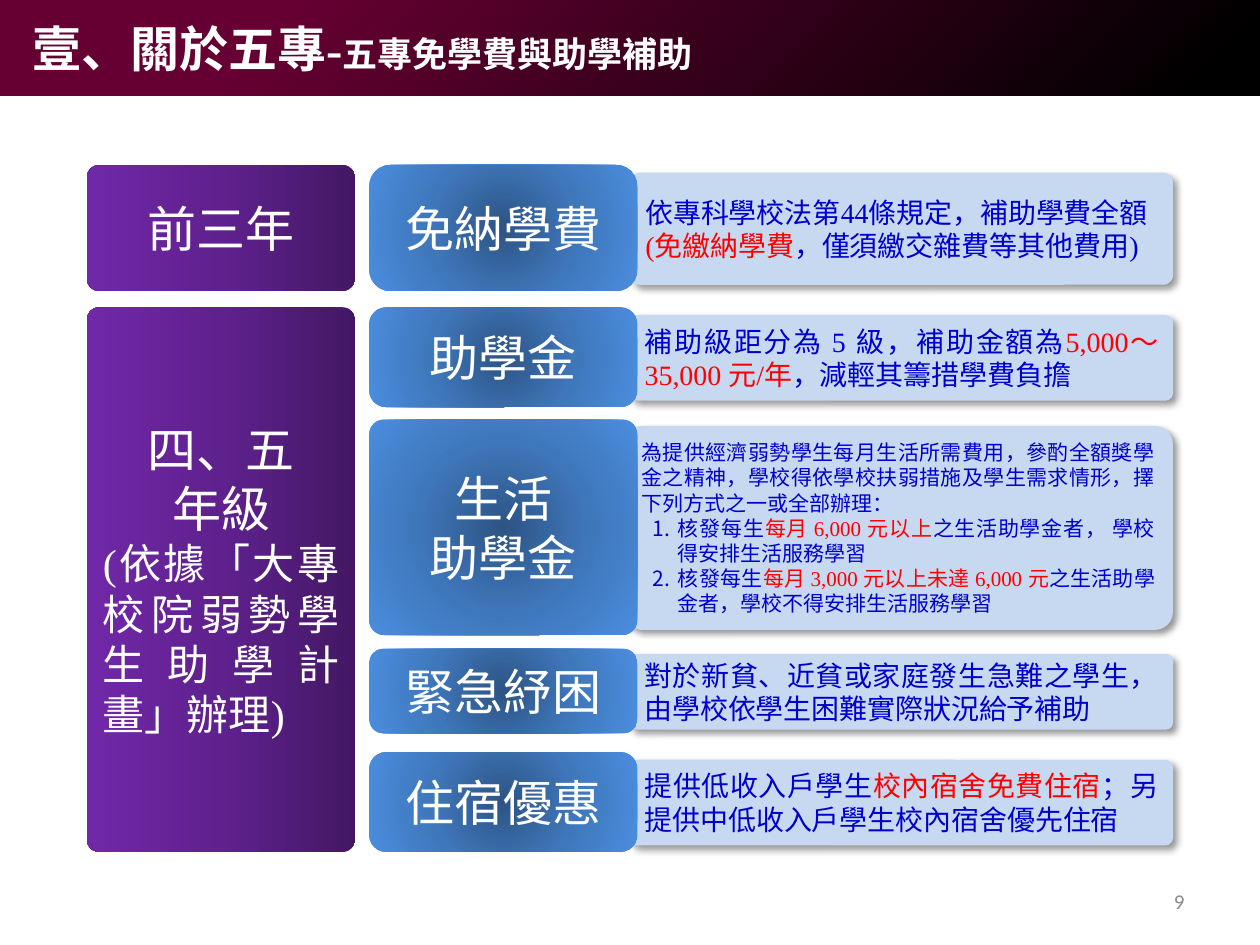
from lxml.etree import SubElement
from pptx import Presentation
from pptx.dml.color import RGBColor
from pptx.enum.shapes import MSO_SHAPE as SHAPE
from pptx.enum.text import MSO_ANCHOR as ANCHOR, MSO_AUTO_SIZE as AUTO, PP_ALIGN as AL
from pptx.oxml.ns import qn
from pptx.util import Inches, Pt

# Content
WHITE, BLUE, RED, PANEL = "FFFFFF", "0000CC", "FF0000", "C6D9F1"
BANNER = [(5, "660032"), (22, "660032"), (95, "000000")]
PURPLE = [(0, "431764"), (50, "5F218E"), (100, "7128A8")]
SKY = [(0, "2D5484"), (50, "3F77BB"), (100, "4B8DDE")]

TITLE = [("壹、關於五專-", {"size": 28}), ("五專免學費與助學補助", {"size": 20})]
CENTER, JUSTIFY = {"size": 28, "align": AL.CENTER}, {"size": 24, "align": AL.JUSTIFY}

# Years: top, height, corner, paragraphs
YEARS = [
    (1.31, 1, 0.1, [("前三年", CENTER)]),
    (2.44, 4.32, 0.046, [
        ("四、五", CENTER),
        ("年級", CENTER),
        ("(依據「大專校院弱勢學生助學計畫」辦理)", JUSTIFY)]),
]

# Subsidies: top, height, panel inset, corner, label lines, text size, panel paragraphs
SUBSIDIES = [
    (1.31, 1, 0.06, 0.167, ["免納學費"], 16, [
        ["依專科學校法第44條規定，補助學費全額"],
        [("(免繳納學費", {"color": RED}), "，僅須繳交雜費等其他費用)"]]),
    (2.44, 0.79, 0.06, 0.167, ["助學金"], 16, [
        ["補助級距分為 5 級，補助金額為", ("5,000～ 35,000 元/年", {"color": RED}),
         "，減輕其籌措學費負擔"]]),
    (3.33, 1.71, 0.05, 0.069, ["生活", "助學金"], 12, [
        ["為提供經濟弱勢學生每月生活所需費用，參酌全額獎學金之精神，"
         "學校得依學校扶弱措施及學生需求情形，擇下列方式之一或全部辦理："],
        ["核發每生", ("每月 6,000 元以上", {"color": RED}),
         "之生活助學金者， 學校得安排生活服務學習"],
        ["核發每生", ("每月 3,000 元以上未達 6,000 元", {"color": RED}),
         "之生活助學金者，學校不得安排生活服務學習"]]),
    (5.15, 0.67, 0.04, 0.167, ["緊急紓困"], 16, [
        ["對於新貧、近貧或家庭發生急難之學生，由學校依學生困難實際狀況給予補助"]]),
    (5.97, 0.79, 0.06, 0.167, ["住宿優惠"], 16, [
        ["提供低收入戶學生", ("校內宿舍免費住宿", {"color": RED}),
         "；另提供中低收入戶學生校內宿舍優先住宿"]]),
]


def rgb(value):
    return RGBColor.from_string(value)


def add(parent, tag, **attrs):
    return SubElement(parent, qn(tag), {k: str(v) for k, v in attrs.items()})


def write(tf, runs, size=16, color=WHITE, align=AL.JUSTIFY, bold=False,
          font="Times New Roman", numbered=False):
    """Add one paragraph; a run is a text or a (text, format) pair."""
    p = tf.paragraphs[0] if not tf.paragraphs[0].runs else tf.add_paragraph()
    p.alignment = align
    if numbered:
        pPr = p._p.get_or_add_pPr()
        pPr.set("marL", str(Inches(0.29)))
        pPr.set("indent", str(Inches(-0.2)))
        add(pPr, "a:buFont", typeface="+mj-lt")
        add(pPr, "a:buAutoNum", type="arabicPeriod")
        add(add(pPr, "a:tabLst"), "a:tab", pos=Inches(0.29), algn="l")
    for run in [runs] if isinstance(runs, str) else runs:
        text, fmt = (run, {}) if isinstance(run, str) else run
        r = p.add_run()
        r.text = text
        r.font.name, r.font.bold = font, bold
        r.font.size = Pt(fmt.get("size", size))
        r.font.color.rgb = rgb(fmt.get("color", color))


def gradient(sp, stops, angle=None):
    """Linear gradient at an angle, or one from the centre without it."""
    sp.fill.gradient()
    grad = sp._element.spPr.find(qn("a:gradFill"))
    for child in list(grad):
        grad.remove(child)
    gs_list = add(grad, "a:gsLst")
    for pos, color in stops:
        add(add(gs_list, "a:gs", pos=pos * 1000), "a:srgbClr", val=color)
    if angle is None:
        add(add(grad, "a:path", path="circle"), "a:fillToRect",
            l=50000, t=50000, r=50000, b=50000)
    else:
        add(grad, "a:lin", ang=angle * 60000, scaled=0)


def box(shapes, left, top, width, height, corner=None):
    kind = SHAPE.RECTANGLE if corner is None else SHAPE.ROUNDED_RECTANGLE
    sp = shapes.add_shape(kind, Inches(left), Inches(top), Inches(width), Inches(height))
    if corner is not None:
        sp.adjustments[0] = corner
    sp.line.fill.background()
    sp.shadow.inherit = False
    sp.text_frame.vertical_anchor = ANCHOR.MIDDLE
    return sp


def drop_shadow(sp):
    effects = sp._element.spPr.find(qn("a:effectLst"))
    shadow = add(effects, "a:outerShdw", blurRad=Pt(4), dist=Pt(3), dir=45 * 60000,
                 algn="tl", rotWithShape=0)
    add(add(shadow, "a:srgbClr", val="000000"), "a:alpha", val=40000)


def text_box(shapes, left, top, width, height):
    tf = shapes.add_textbox(Inches(left), Inches(top), Inches(width), Inches(height)).text_frame
    tf.word_wrap = True
    return tf


def main():
    prs = Presentation()
    prs.slide_width, prs.slide_height = Inches(10), Inches(7.5)
    shapes = prs.slides.add_slide(prs.slide_layouts[6]).shapes

    # Banner
    gradient(box(shapes, 0, 0, 10, 0.76), BANNER, 45)

    # Detail panels, tucked under the labels
    for top, height, inset, _, _, size, paragraphs in SUBSIDIES:
        left = 4.95 if len(paragraphs) > 2 else 5
        sp = box(shapes, left, top + inset, 9.31 - left, height - 2 * inset + 0.01, 0.089)
        sp.fill.solid()
        sp.fill.fore_color.rgb = rgb(PANEL)
        drop_shadow(sp)
        for i, runs in enumerate(paragraphs):
            write(sp.text_frame, runs, size=size, color=BLUE,
                  numbered=i > 0 and len(paragraphs) > 2)

    # Year blocks
    for top, height, corner, paragraphs in YEARS:
        sp = box(shapes, 0.69, top, 2.13, height, corner)
        gradient(sp, PURPLE, 180)
        for text, fmt in paragraphs:
            write(sp.text_frame, text, **fmt)

    # Subsidy labels
    for top, height, _, corner, lines, _, _ in SUBSIDIES:
        sp = box(shapes, 2.93, top, 2.13, height, corner)
        gradient(sp, SKY)
        for line in lines:
            write(sp.text_frame, line, **CENTER)

    # Title and page number
    tf = text_box(shapes, 0.16, 0.1, 8.46, 0.57)
    tf.auto_size = AUTO.SHAPE_TO_FIT_TEXT
    write(tf, TITLE, bold=True)
    tf = text_box(shapes, 7.17, 6.95, 2.33, 0.4)
    tf.vertical_anchor = ANCHOR.MIDDLE
    write(tf, "9", size=12, color="898989", align=AL.RIGHT, font="Calibri")

    prs.save("out.pptx")


if __name__ == "__main__":
    main()
